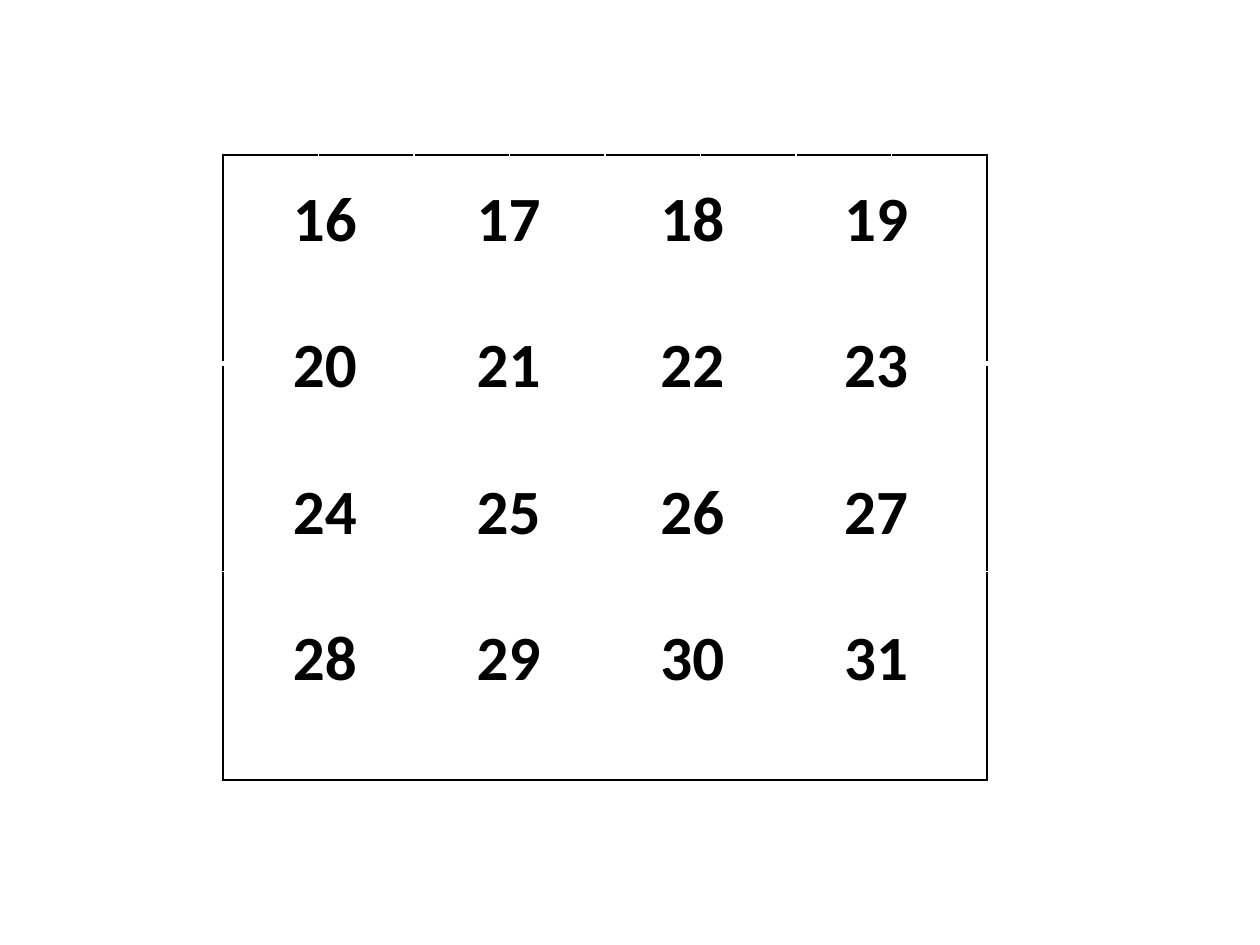
import pptx
import pptx.dml.color
import pptx.enum.text
import pptx.oxml
import pptx.oxml.ns
import pptx.util

PX = 914400 // 126
COLORS = {"line": "000000", "paper": "FFFFFF"}


class NumberSlide:
    font = "Calibri"
    size = 36

    def __init__(self, slide):
        self.slide = slide

    def grid(self, left, top, width, height, rows, cols):
        """Add a plain table with equal columns and rows."""
        box = [value * PX for value in (left, top, width, height)]
        table = self.slide.shapes.add_table(rows, cols, *box).table
        table.first_row = table.horz_banding = False
        for column in table.columns:
            column.width = width * PX // cols
        for row in table.rows:
            row.height = height * PX // rows
        for cell in table.iter_cells():
            cell.fill.background()
        return table

    def borders(self, table, outline):
        """Draw white inner rules, a thick one below the first row, and the outline."""
        last_row, last_col = len(table.rows) - 1, len(table.columns) - 1
        for r, row in enumerate(table.rows):
            for c, cell in enumerate(row.cells):
                outer = {"L": c == 0, "R": c == last_col, "T": r == 0, "B": r == last_row}
                for position, (side, is_outer) in enumerate(outer.items()):
                    color = COLORS[outline if is_outer else "paper"]
                    points = 3 if side == "B" and r == 0 else 1
                    line = pptx.oxml.parse_xml(
                        f'<a:ln{side} {pptx.oxml.ns.nsdecls("a")} w="{pptx.util.Pt(points)}">'
                        f'<a:solidFill><a:srgbClr val="{color}"/></a:solidFill></a:ln{side}>')
                    cell._tc.get_or_add_tcPr().insert(position, line)

    def number(self, cell, value):
        """Write one bold centred number."""
        cell.text_frame.text = str(value)
        paragraph = cell.text_frame.paragraphs[0]
        paragraph.alignment = pptx.enum.text.PP_ALIGN.CENTER
        font = paragraph.runs[0].font
        font.name, font.size, font.bold = self.font, pptx.util.Pt(self.size), True
        font.color.rgb = pptx.dml.color.RGBColor.from_string(COLORS["line"])


def main():
    deck = pptx.Presentation()
    deck.slide_width, deck.slide_height = pptx.util.Inches(10), pptx.util.Inches(7.5)
    page = NumberSlide(deck.slides.add_slide(deck.slide_layouts[6]))

    # Outer frame
    frame = page.grid(223, 155, 764, 625, rows=3, cols=8)
    page.borders(frame, "line")

    # Numbers 16 to 31
    numbers = page.grid(233, 175, 735, 586, rows=4, cols=4)
    page.borders(numbers, "paper")
    for value, cell in enumerate(numbers.iter_cells(), start=16):
        page.number(cell, value)

    deck.save("out.pptx")


if __name__ == "__main__":
    main()
